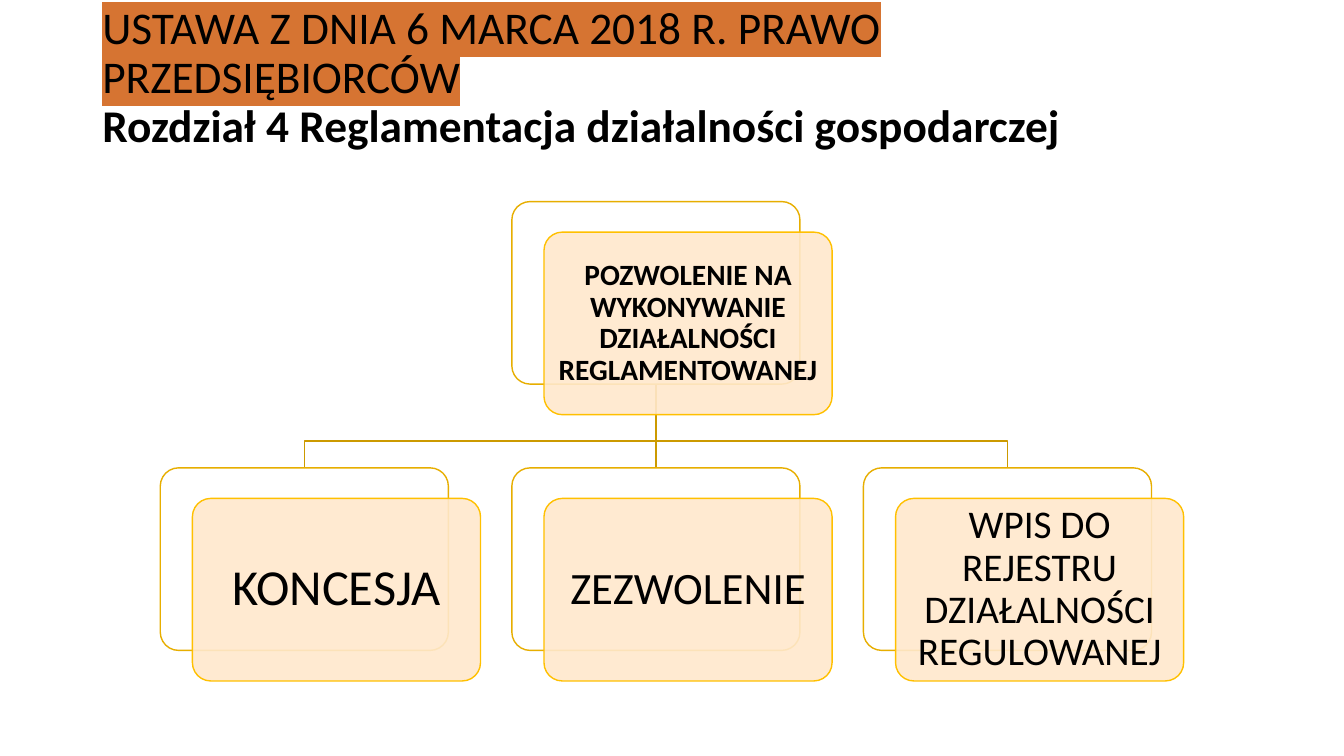
from dataclasses import dataclass

from lxml.etree import SubElement
from pptx import Presentation
from pptx.dml.color import RGBColor
from pptx.enum.shapes import MSO_CONNECTOR, MSO_SHAPE
from pptx.enum.text import MSO_ANCHOR, PP_ALIGN
from pptx.oxml.ns import qn
from pptx.util import Cm, Pt

COLORS = {
    "text": "000000",
    "highlight": "D67432",
    "back_fill": "FFFFFF",
    "back_line": "E7AE00",
    "front_fill": "FFE8CC",
    "front_line": "FFC000",
    "branch": "CC9A00",
}
FONT = "Calibri"

# Chart geometry in centimetres
CARD_WIDTH, CARD_HEIGHT = 7.26, 4.6
FRONT_DX, FRONT_DY = 0.81, 0.77
FIRST_LEFT, COLUMN_STEP = 4.04, 8.86
ROOT_TOP, CHILD_TOP = 5.08, 11.79
BEND_TOP = 11.11


@dataclass
class Card:
    label: str
    column: int
    top: float
    size: float
    inset: float
    bold: bool = False

    @property
    def left(self) -> float:
        return FIRST_LEFT + self.column * COLUMN_STEP

    @property
    def center(self) -> float:
        return self.left + CARD_WIDTH / 2


ROOT = Card("POZWOLENIE NA WYKONYWANIE DZIAŁALNOŚCI REGLAMENTOWANEJ",
            1, ROOT_TOP, 21, 0.23, True)
CHILDREN = [
    Card("KONCESJA", 0, CHILD_TOP, 36, 0.38),
    Card("ZEZWOLENIE", 1, CHILD_TOP, 32, 0.33),
    Card("WPIS DO REJESTRU DZIAŁALNOŚCI REGULOWANEJ", 2, CHILD_TOP, 28, 0.3),
]


def color(name: str) -> RGBColor:
    return RGBColor.from_string(COLORS[name])


def style_span(span, size: float, bold: bool) -> None:
    span.font.name = FONT
    span.font.size = Pt(size)
    span.font.bold = bold
    span.font.color.rgb = color("text")


def style_line(shape, name: str) -> None:
    shape.line.color.rgb = color(name)
    shape.line.width = Pt(1)


def add_title(page) -> None:
    box = page.shapes.add_textbox(Cm(2.33), Cm(1.02), Cm(29.21), Cm(3.68))
    frame = box.text_frame
    frame.word_wrap = True
    frame.vertical_anchor = MSO_ANCHOR.MIDDLE
    frame.margin_bottom = Cm(1.85)
    para = frame.paragraphs[0]
    para.text = ("USTAWA Z DNIA 6 MARCA 2018 R. PRAWO PRZEDSIĘBIORCÓW\v"
                 "Rozdział 4 Reglamentacja działalności gospodarczej")
    para.line_spacing = 0.9
    act, chapter = para.runs
    style_span(act, 32.4, False)
    style_span(chapter, 32.4, True)
    # Highlight follows the text fill in the run properties
    properties = act.font._element
    highlight = SubElement(properties, qn("a:highlight"))
    SubElement(highlight, qn("a:srgbClr"), val=COLORS["highlight"])
    properties.find(qn("a:solidFill")).addnext(highlight)


def add_elbow(page, child: Card) -> None:
    builder = page.shapes.build_freeform(
        Cm(ROOT.center), Cm(ROOT_TOP + CARD_HEIGHT))
    builder.add_line_segments([
        (Cm(ROOT.center), Cm(BEND_TOP)),
        (Cm(child.center), Cm(BEND_TOP)),
        (Cm(child.center), Cm(CHILD_TOP)),
    ], close=False)
    elbow = builder.convert_to_shape()
    elbow.shadow.inherit = False
    elbow.fill.background()
    style_line(elbow, "branch")


def add_stem(page):
    stem = page.shapes.add_connector(
        MSO_CONNECTOR.STRAIGHT, Cm(ROOT.center), Cm(ROOT_TOP + CARD_HEIGHT),
        Cm(ROOT.center), Cm(CHILD_TOP))
    style_line(stem, "branch")
    SubElement(stem._element.spPr, qn("a:effectLst"))
    return stem


def add_panel(page, left: float, top: float, layer: str):
    panel = page.shapes.add_shape(
        MSO_SHAPE.ROUNDED_RECTANGLE, Cm(left), Cm(top),
        Cm(CARD_WIDTH), Cm(CARD_HEIGHT))
    panel.adjustments[0] = 0.1
    panel.shadow.inherit = False
    panel.fill.solid()
    panel.fill.fore_color.rgb = color(f"{layer}_fill")
    style_line(panel, f"{layer}_line")
    return panel


def add_card(page, card: Card):
    back = add_panel(page, card.left, card.top, "back")
    front = add_panel(page, card.left + FRONT_DX, card.top + FRONT_DY, "front")
    fill_color = front._element.spPr.find(qn("a:solidFill"))[0]
    SubElement(fill_color, qn("a:alpha"), val="90000")
    frame = front.text_frame
    frame.word_wrap = True
    frame.vertical_anchor = MSO_ANCHOR.MIDDLE
    frame.margin_left = frame.margin_right = Cm(card.inset)
    frame.margin_top = frame.margin_bottom = Cm(card.inset)
    frame.text = card.label
    para = frame.paragraphs[0]
    para.alignment = PP_ALIGN.CENTER
    para.line_spacing = 0.9
    style_span(para.runs[0], card.size, card.bold)
    return back


def main() -> None:
    deck = Presentation()
    deck.slide_width, deck.slide_height = Cm(33.87), Cm(19.05)
    page = deck.slides.add_slide(deck.slide_layouts[6])
    add_title(page)

    # Branches lie behind the cards
    for child in CHILDREN:
        if child.column != ROOT.column:
            add_elbow(page, child)
    stem = add_stem(page)

    # Cards, with the straight branch joined to the middle column
    root_back = add_card(page, ROOT)
    child_backs = [add_card(page, child) for child in CHILDREN]
    stem.begin_connect(root_back, 2)
    stem.end_connect(child_backs[ROOT.column], 0)

    deck.save("out.pptx")


if __name__ == "__main__":
    main()
